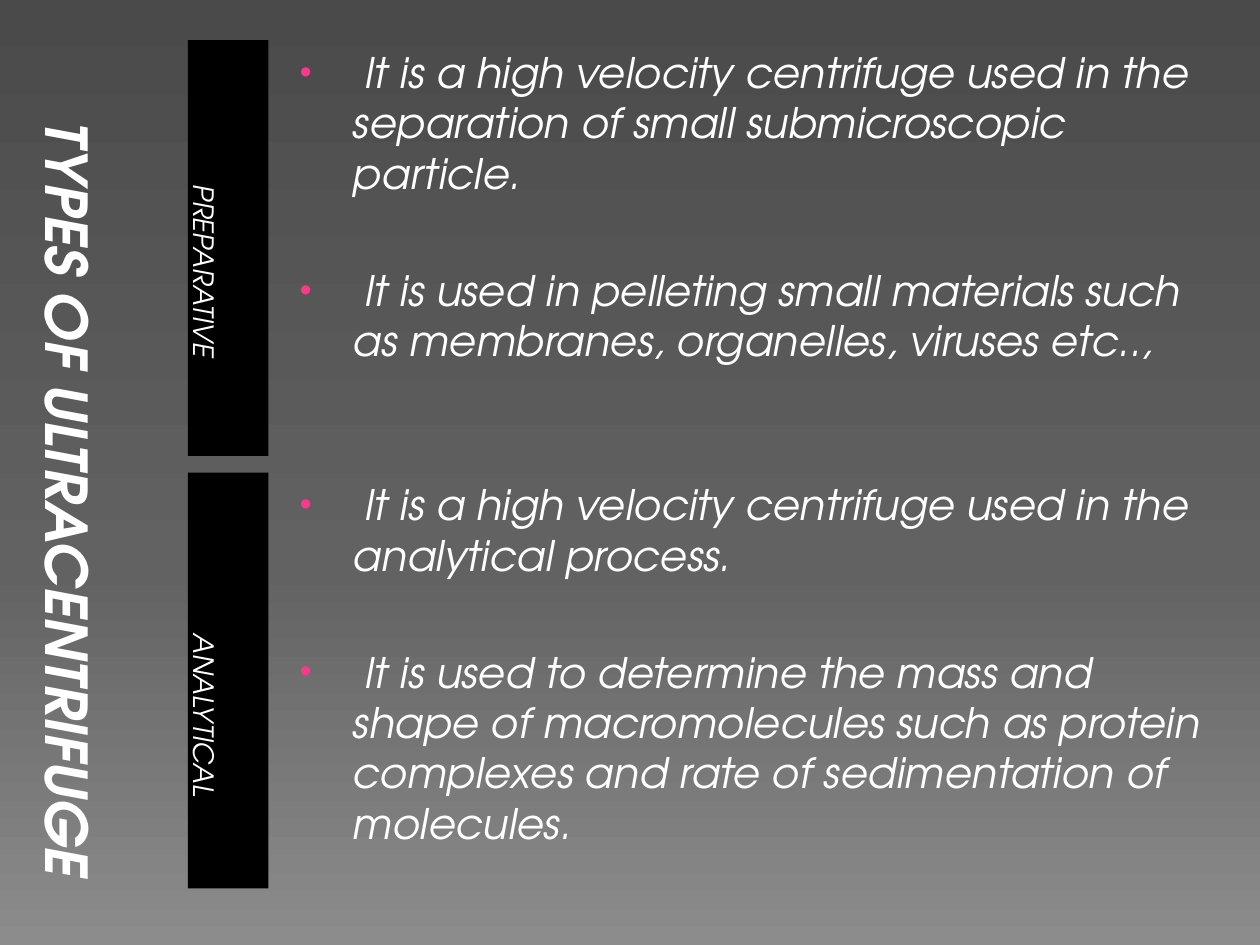
from copy import deepcopy

from pptx import Presentation
from pptx.dml.color import RGBColor
from pptx.enum.text import MSO_ANCHOR, MSO_AUTO_SIZE, PP_ALIGN
from pptx.oxml import parse_xml
from pptx.oxml.ns import nsdecls, qn
from pptx.util import Pt

BOTTOM, TOP = MSO_ANCHOR.BOTTOM, MSO_ANCHOR.TOP
CENTER, LEFT = PP_ALIGN.CENTER, PP_ALIGN.LEFT
NO_AUTOFIT = MSO_AUTO_SIZE.NONE

FONT = "TeX Gyre Adventor"
COLORS = {"text": "FFFFFF", "label": "000000", "bullet": "FF388C"}
BACKGROUND = [(0, "4A4A4A"), (0.6, "626262"), (1, "8C8C8C")]

COMPARISON_LAYOUT = 4
ROW_TOP, ROW_HEIGHT, ROW_PITCH = 23, 237.6, 247

# Label, shift of the label along its bar in points, bullet points
TYPES = [
    ("PREPARATIVE", 26, [
        " It is a high velocity centrifuge used in the separation of small "
        "submicroscopic particle.",
        " It is used in pelleting small materials such as membranes, "
        "organelles, viruses etc..,",
    ]),
    ("ANALYTICAL", 40, [
        " It is a high velocity centrifuge used in the analytical process.",
        " It is used to determine the mass and shape of macromolecules such "
        "as protein complexes and rate of sedimentation of molecules.",
    ]),
]


def paint_background(slide):
    fill = slide.background.fill
    fill.gradient()
    fill.gradient_angle = 270
    stops = slide.element.find(".//" + qn("a:gsLst"))
    stops.insert(1, deepcopy(stops[0]))
    for stop, (position, color) in zip(fill.gradient_stops, BACKGROUND):
        stop.position = position
        stop.color.rgb = RGBColor.from_string(color)


def place(holder, left, top, width, height, anchor):
    holder.left, holder.top = Pt(left), Pt(top)
    holder.width, holder.height = Pt(width), Pt(height)
    frame = holder.text_frame
    frame.auto_size = NO_AUTOFIT
    frame.word_wrap = True
    frame.vertical_anchor = anchor
    return frame


def style(paragraph, size, align, bold=False):
    paragraph.alignment = align
    for run in paragraph.runs:
        font = run.font
        font.name, font.size = FONT, Pt(size)
        font.bold, font.italic = bold, True
        font.color.rgb = RGBColor.from_string(COLORS["text"])


def set_indent(paragraph, margin, first_line=0):
    properties = paragraph._p.get_or_add_pPr()
    properties.set("marL", str(Pt(margin)))
    properties.set("indent", str(Pt(first_line)))
    return properties


def write_vertical(holder, text, box, size, shift, bold=False):
    """Text read downwards: a lying box turned upright about its centre."""
    left, top, width, height = box
    offset = (height - width) / 2
    frame = place(holder, left - offset, top + offset, height, width, BOTTOM)
    holder.rotation = 90
    frame.margin_left = frame.margin_right = 0
    frame.margin_top = frame.margin_bottom = 0
    frame.text = text
    paragraph = frame.paragraphs[0]
    set_indent(paragraph, shift)
    paragraph.space_before = Pt(0)
    style(paragraph, size, CENTER, bold)


def write_bullets(holder, points, box):
    frame = place(holder, *box, TOP)
    for number, point in enumerate(points):
        paragraph = frame.add_paragraph() if number else frame.paragraphs[0]
        paragraph.text = point
        paragraph.space_before = Pt(38 if number else 0)
        properties = set_indent(paragraph, 35.3, -30.2)
        for xml in (
            f'<a:buClr {nsdecls("a")}><a:srgbClr val="{COLORS["bullet"]}"/></a:buClr>',
            f'<a:buSzPct {nsdecls("a")} val="80000"/>',
            f'<a:buChar {nsdecls("a")} char="•"/>',
        ):
            properties.append(parse_xml(xml))
        style(paragraph, 24, LEFT)


def main():
    prs = Presentation()
    prs.slide_width, prs.slide_height = Pt(720), Pt(540)
    slide = prs.slides.add_slide(prs.slide_layouts[COMPARISON_LAYOUT])
    paint_background(slide)

    # Title down the left edge
    write_vertical(slide.shapes.title, "TYPES OF ULTRACENTRIFUGE",
                   (19.4, ROW_TOP, 84.2, 484.6), 33, 40, bold=True)

    # One row per type: black label bar and its points
    holders = list(slide.placeholders)[1:]
    for row, (label, shift, points) in enumerate(TYPES):
        label_holder, points_holder = holders[2 * row:2 * row + 2]
        top = ROW_TOP + row * ROW_PITCH
        label_holder.fill.solid()
        label_holder.fill.fore_color.rgb = RGBColor.from_string(COLORS["label"])
        write_vertical(label_holder, label, (107.3, top, 46, ROW_HEIGHT), 16, shift)
        write_bullets(points_holder, points, (159.1, top, 540, ROW_HEIGHT))

    prs.save("out.pptx")


if __name__ == "__main__":
    main()
